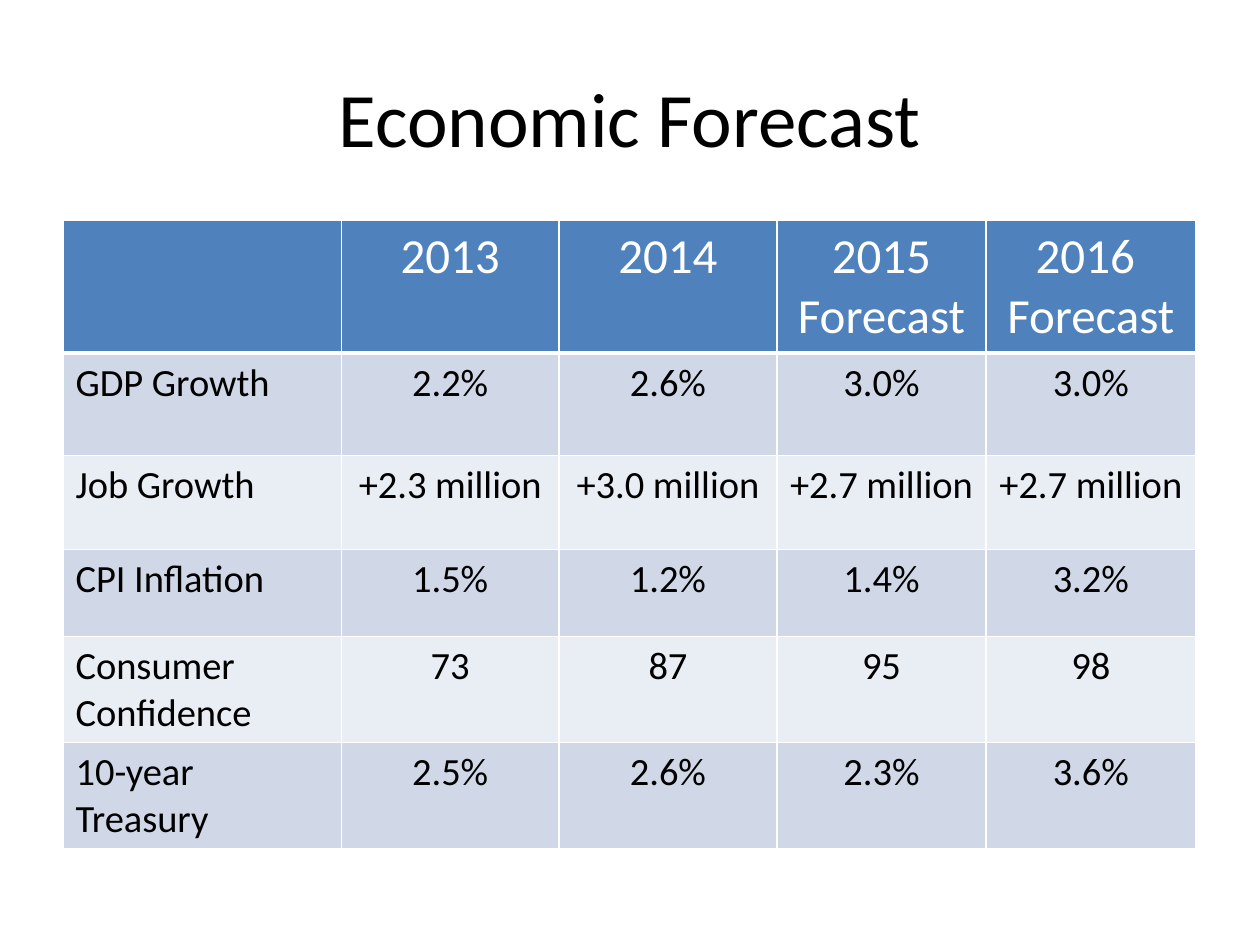
from dataclasses import dataclass

from lxml import etree
from pptx import Presentation
from pptx.dml.color import RGBColor
from pptx.enum.text import MSO_ANCHOR, PP_ALIGN
from pptx.oxml.ns import qn
from pptx.util import Cm, Pt

LEFT, CENTER = PP_ALIGN.LEFT, PP_ALIGN.CENTER
MIDDLE = MSO_ANCHOR.MIDDLE
TITLE_ONLY = 5
FONT = "Calibri"
BLACK, WHITE, BLUE = "000000", "FFFFFF", "4F81BD"
BANDS = ("D0D8E8", "E9EDF4")
COLUMN_WIDTHS = (5.61, 4.39, 4.39, 4.22, 4.22)


@dataclass(frozen=True)
class TableRow:
    height: float
    texts: tuple[str, ...]


@dataclass(frozen=True)
class RowStyle:
    fill: str
    color: str
    size: int
    bottom_border: int


ROWS = (
    TableRow(2.65, ("", "2013", "2014", "2015\nForecast", "2016 \nForecast")),
    TableRow(2.06, ("GDP Growth", "2.2%", "2.6%", "3.0%", "3.0%")),
    TableRow(1.9, ("Job Growth", "+2.3 million", "+3.0 million", "+2.7 million", "+2.7 million")),
    TableRow(1.75, ("CPI Inflation", "1.5%", "1.2%", "1.4%", "3.2%")),
    TableRow(2.13, ("Consumer Confidence", "73", "87", "95", "98")),
    TableRow(2.13, ("10-year Treasury", "2.5%", "2.6%", "2.3%", "3.6%")),
)


def rgb(value: str) -> RGBColor:
    return RGBColor.from_string(value)


def write_text(frame, text: str, size: int, color: str, alignment) -> None:
    for index, line in enumerate(text.split("\n")):
        para = frame.paragraphs[0] if index == 0 else frame.add_paragraph()
        para.alignment = alignment
        span = para.add_run()
        span.text = line
        span.font.name = FONT
        span.font.size = Pt(size)
        span.font.bold = False
        span.font.color.rgb = rgb(color)


def add_borders(cell, bottom_width: int) -> None:
    properties = cell._tc.get_or_add_tcPr()
    for side, width in (("lnL", 1), ("lnR", 1), ("lnT", 1), ("lnB", bottom_width)):
        line = etree.SubElement(properties, qn(f"a:{side}"), w=str(Pt(width)))
        fill = etree.SubElement(line, qn("a:solidFill"))
        etree.SubElement(fill, qn("a:srgbClr"), val=WHITE)


def format_cell(cell, text: str, style: RowStyle, alignment) -> None:
    add_borders(cell, style.bottom_border)
    cell.fill.solid()
    cell.fill.fore_color.rgb = rgb(style.fill)
    if text:
        write_text(cell.text_frame, text, style.size, style.color, alignment)


def row_style(index: int) -> RowStyle:
    if index == 0:
        return RowStyle(BLUE, WHITE, 28, 3)
    return RowStyle(BANDS[(index - 1) % 2], BLACK, 22, 1)


def add_title(page, text: str) -> None:
    box = page.shapes.title
    box.left, box.top, box.width, box.height = Cm(1.27), Cm(0.76), Cm(22.86), Cm(3.18)
    box.text_frame.vertical_anchor = MIDDLE
    write_text(box.text_frame, text, 44, BLACK, CENTER)


def add_forecast_table(page) -> None:
    height = sum(row.height for row in ROWS)
    table = page.shapes.add_table(
        len(ROWS), len(COLUMN_WIDTHS), Cm(1.27), Cm(4.45), Cm(sum(COLUMN_WIDTHS)), Cm(height)
    ).table
    for column, width in zip(table.columns, COLUMN_WIDTHS):
        column.width = Cm(width)
    for row_index, row in enumerate(ROWS):
        table.rows[row_index].height = Cm(row.height)
        style = row_style(row_index)
        for column_index, text in enumerate(row.texts):
            alignment = CENTER if column_index else LEFT
            format_cell(table.cell(row_index, column_index), text, style, alignment)


def main() -> None:
    deck = Presentation()
    deck.slide_width, deck.slide_height = Cm(25.4), Cm(19.05)
    page = deck.slides.add_slide(deck.slide_layouts[TITLE_ONLY])
    add_title(page, "Economic Forecast")
    add_forecast_table(page)
    deck.save("out.pptx")


if __name__ == "__main__":
    main()
